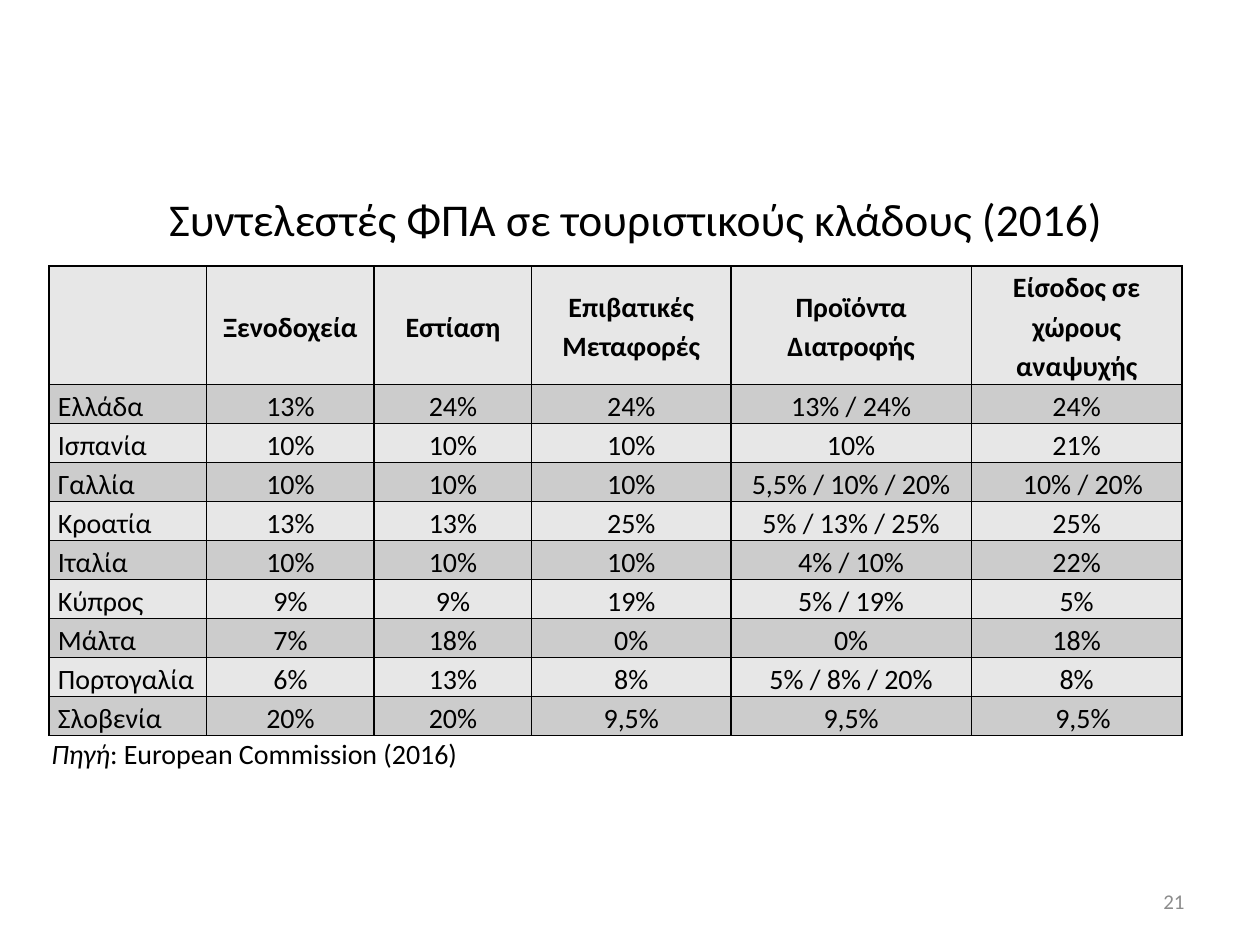
from dataclasses import dataclass

from lxml import etree
from pptx import Presentation
from pptx.dml.color import RGBColor
from pptx.enum.text import MSO_ANCHOR, PP_ALIGN
from pptx.oxml.ns import qn
from pptx.shapes.base import BaseShape
from pptx.slide import Slide
from pptx.table import _Cell
from pptx.text.text import Font
from pptx.util import Inches, Pt

CENTER, RIGHT, LEFT, JUSTIFY = PP_ALIGN.CENTER, PP_ALIGN.RIGHT, PP_ALIGN.LEFT, PP_ALIGN.JUSTIFY
MIDDLE, TOP = MSO_ANCHOR.MIDDLE, MSO_ANCHOR.TOP

FONT_NAME = "Calibri"
BLACK, GRAY = "000000", "8C8C8C"
LIGHT_BAND, DARK_BAND = "E7E7E7", "CCCCCC"

COLUMN_WIDTHS = (1.25, 1.33, 1.25, 1.58, 1.91, 1.67)
HEADER_HEIGHT, ROW_HEIGHT = 0.94, 0.31
CELL_MARGIN = 0.07
EXTRA_INDENT = 0.1
HEADERS = ("", "Ξενοδοχεία", "Εστίαση", "Επιβατικές Μεταφορές",
           "Προϊόντα Διατροφής", "Είσοδος σε χώρους αναψυχής")


@dataclass(frozen=True)
class CountryRates:
    country: str
    hotels: str
    catering: str
    transport: str
    food: str
    leisure: str
    leisure_indented: bool = False

    def texts(self) -> tuple[str, ...]:
        return (self.country, self.hotels, self.catering,
                self.transport, self.food, self.leisure)


COUNTRIES = (
    CountryRates("Ελλάδα", "13%", "24%", "24%", "13% / 24%", "24%"),
    CountryRates("Ισπανία", "10%", "10%", "10%", "10%", "21%"),
    CountryRates("Γαλλία", "10%", "10%", "10%", "5,5% / 10% / 20%", "10% / 20%", True),
    CountryRates("Κροατία", "13%", "13%", "25%", "5% / 13% / 25%", "25%"),
    CountryRates("Ιταλία", "10%", "10%", "10%", "4% / 10%", "22%"),
    CountryRates("Κύπρος", "9%", "9%", "19%", "5% / 19%", "5%"),
    CountryRates("Μάλτα", "7%", "18%", "0%", "0%", "18%"),
    CountryRates("Πορτογαλία", "6%", "13%", "8%", "5% / 8% / 20%", "8%"),
    CountryRates("Σλοβενία", "20%", "20%", "9,5%", "9,5%", "9,5%", True),
)


def color(value: str) -> RGBColor:
    return RGBColor.from_string(value)


def set_font(font: Font, size: float, value: str = BLACK, bold: bool = False) -> None:
    font.name = FONT_NAME
    font.size = Pt(size)
    font.bold = bold
    font.color.rgb = color(value)


def place(shape: BaseShape, left: float, top: float, width: float, height: float) -> None:
    shape.left, shape.top = Inches(left), Inches(top)
    shape.width, shape.height = Inches(width), Inches(height)


def add_borders(cell: _Cell) -> None:
    """Draw the four cell edges; must run before the cell gets its fill."""
    properties = cell._tc.get_or_add_tcPr()
    for edge in ("lnL", "lnR", "lnT", "lnB"):
        line = etree.SubElement(properties, qn(f"a:{edge}"), w=str(Pt(1)))
        fill = etree.SubElement(line, qn("a:solidFill"))
        etree.SubElement(fill, qn("a:srgbClr"), val=BLACK)


def fill_cell(cell: _Cell, text: str, band: str, align: PP_ALIGN = CENTER,
              anchor: MSO_ANCHOR = MIDDLE, bold: bool = False) -> None:
    add_borders(cell)
    cell.fill.solid()
    cell.fill.fore_color.rgb = color(band)
    cell.margin_left = cell.margin_right = Inches(CELL_MARGIN)
    cell.margin_top = cell.margin_bottom = 0
    cell.vertical_anchor = anchor
    cell.text = text
    paragraph = cell.text_frame.paragraphs[0]
    paragraph.alignment = align
    paragraph.line_spacing = 1.15
    set_font(paragraph.font, 16, bold=bold)


def add_title(slide: Slide) -> None:
    title = slide.shapes.title
    place(title, 0.55, 1.41, 9, 0.64)
    title.text_frame.text = "Συντελεστές ΦΠΑ σε τουριστικούς κλάδους (2016)"
    title.text_frame.vertical_anchor = MIDDLE
    paragraph = title.text_frame.paragraphs[0]
    paragraph.alignment = CENTER
    set_font(paragraph.font, 26)


def add_rates_table(slide: Slide) -> None:
    height = HEADER_HEIGHT + ROW_HEIGHT * len(COUNTRIES)
    table = slide.shapes.add_table(
        len(COUNTRIES) + 1, len(HEADERS), Inches(0.39), Inches(2.11),
        Inches(sum(COLUMN_WIDTHS)), Inches(height)).table
    for column, width in zip(table.columns, COLUMN_WIDTHS):
        column.width = Inches(width)
    for row in table.rows:
        row.height = Inches(ROW_HEIGHT)
    table.rows[0].height = Inches(HEADER_HEIGHT)

    for column_index, header in enumerate(HEADERS):
        fill_cell(table.cell(0, column_index), header, LIGHT_BAND, bold=True)
    for row_index, rates in enumerate(COUNTRIES, start=1):
        band = DARK_BAND if row_index % 2 else LIGHT_BAND
        country, *values = rates.texts()
        fill_cell(table.cell(row_index, 0), country, band, JUSTIFY, TOP)
        for column_index, value in enumerate(values, start=1):
            fill_cell(table.cell(row_index, column_index), value, band)
        if rates.leisure_indented:
            leisure_cell = table.cell(row_index, len(values))
            leisure_cell.margin_left = Inches(CELL_MARGIN + EXTRA_INDENT)


def add_text(slide: Slide, box: tuple[float, float, float, float], parts: tuple[str, ...],
             size: float, value: str, align: PP_ALIGN):
    """Add a one-line text box with one run per part and return its paragraph."""
    frame = slide.shapes.add_textbox(*(Inches(length) for length in box)).text_frame
    frame.word_wrap = True
    frame.vertical_anchor = MIDDLE
    paragraph = frame.paragraphs[0]
    paragraph.alignment = align
    set_font(paragraph.font, size, value)
    for part in parts:
        paragraph.add_run().text = part
    return paragraph


def main() -> None:
    presentation = Presentation()
    presentation.slide_width, presentation.slide_height = Inches(10), Inches(7.5)
    slide = presentation.slides.add_slide(presentation.slide_layouts[5])
    add_title(slide)
    add_text(slide, (7.17, 6.95, 2.33, 0.4), ("21",), 12, GRAY, RIGHT)
    add_rates_table(slide)
    source = add_text(slide, (0.31, 5.78, 9, 0.39),
                      ("Πηγή", ": European Commission (2016)"), 16, BLACK, LEFT)
    source.runs[0].font.italic = True
    presentation.save("out.pptx")


if __name__ == "__main__":
    main()
